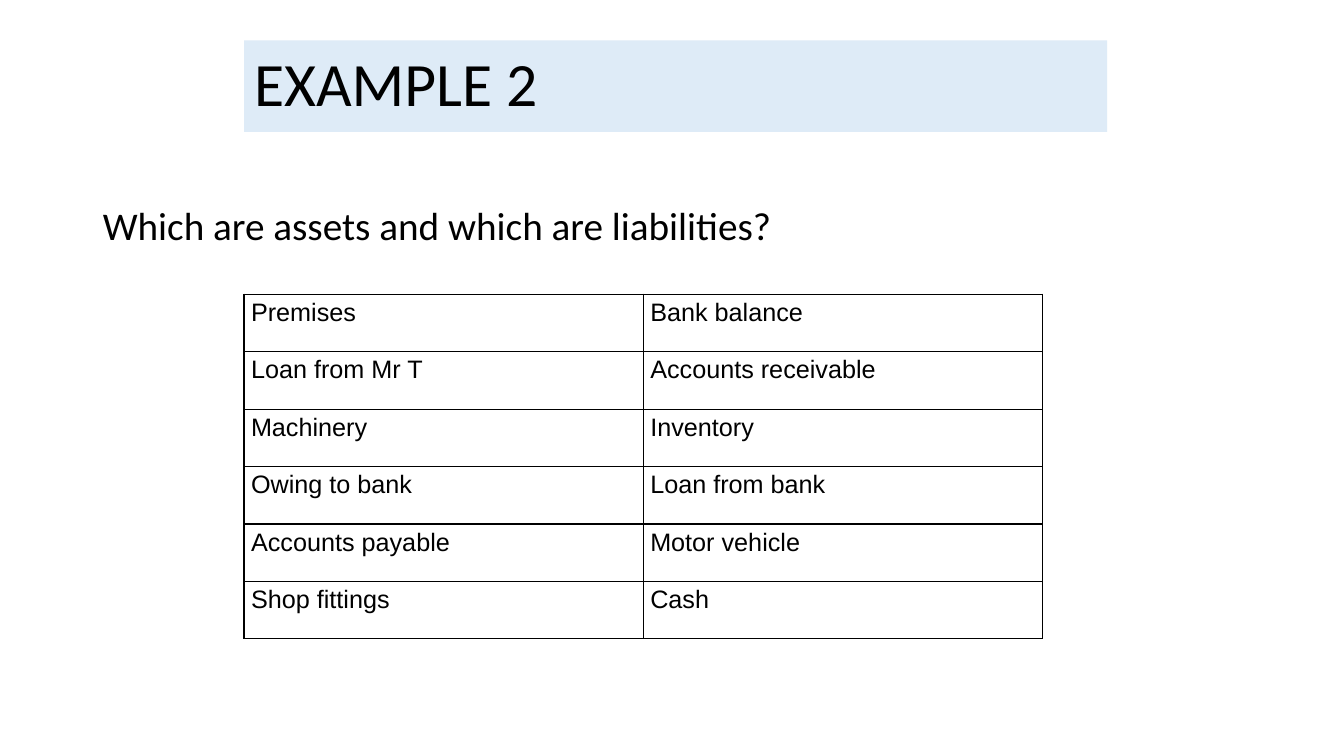
import pptx
import pptx.dml.color
import pptx.enum.text
import pptx.oxml
import pptx.oxml.ns
import pptx.util
from pptx.util import Inches

BLACK = pptx.dml.color.RGBColor(0x00, 0x00, 0x00)
PALE_BLUE = pptx.dml.color.RGBColor(0xDE, 0xEB, 0xF7)
WHITE = pptx.dml.color.RGBColor(0xFF, 0xFF, 0xFF)

ACCOUNT_ITEMS = [
    ("Premises", "Bank balance"),
    ("Loan from Mr T", "Accounts receivable"),
    ("Machinery", "Inventory"),
    ("Owing to bank", "Loan from bank"),
    ("Accounts payable", "Motor vehicle"),
    ("Shop fittings", "Cash"),
]
COLUMN_WIDTH = 3.96
ROW_HEIGHT = 0.57


def write_text(text_frame, text, size, font_name, line_spacing):
    paragraph = text_frame.paragraphs[0]
    paragraph.alignment = pptx.enum.text.PP_ALIGN.LEFT
    paragraph.line_spacing = line_spacing
    paragraph.space_before = pptx.util.Pt(0)
    run = paragraph.add_run()
    run.text = text
    run.font.size = pptx.util.Pt(size)
    run.font.name = font_name
    run.font.color.rgb = BLACK
    return paragraph


def place(shape, left, top, width, height, anchor):
    shape.left, shape.top = Inches(left), Inches(top)
    shape.width, shape.height = Inches(width), Inches(height)
    shape.text_frame.word_wrap = True
    shape.text_frame.auto_size = pptx.enum.text.MSO_AUTO_SIZE.NONE
    shape.text_frame.vertical_anchor = anchor


def add_title(slide, text):
    title = slide.shapes.title
    place(title, 2.42, 0.4, 8.56, 0.91, pptx.enum.text.MSO_ANCHOR.MIDDLE)
    title.fill.solid()
    title.fill.fore_color.rgb = PALE_BLUE
    write_text(title.text_frame, text, size=44, font_name="Calibri", line_spacing=0.9)


def add_question(slide, text):
    body = slide.placeholders[1]
    place(body, 0.92, 2, 11.5, 4.76, pptx.enum.text.MSO_ANCHOR.TOP)
    paragraph = write_text(body.text_frame, text, size=28, font_name="Calibri", line_spacing=0.9)
    # No bullet and no hanging indent
    properties = paragraph._p.get_or_add_pPr()
    properties.set("marL", "0")
    properties.set("indent", "0")
    properties.append(pptx.oxml.parse_xml(f"<a:buNone {pptx.oxml.ns.nsdecls('a')}/>"))


def add_borders(cell):
    properties = cell._tc.get_or_add_tcPr()
    for side in ("lnL", "lnR", "lnT", "lnB"):
        properties.append(pptx.oxml.parse_xml(
            f"<a:{side} {pptx.oxml.ns.nsdecls('a')} w='{pptx.util.Pt(1)}'>"
            f"<a:solidFill><a:srgbClr val='{BLACK}'/></a:solidFill></a:{side}>"))


def format_cell(cell, text):
    cell.margin_left = cell.margin_right = Inches(0.07)
    cell.margin_top = cell.margin_bottom = Inches(0)
    write_text(cell.text_frame, text, size=18, font_name="Arial", line_spacing=1.15)
    add_borders(cell)
    cell.fill.background()


def add_items_table(slide, items):
    row_count, column_count = len(items), len(items[0])
    table = slide.shapes.add_table(
        row_count, column_count, Inches(2.42), Inches(2.92),
        Inches(COLUMN_WIDTH * column_count), Inches(ROW_HEIGHT * row_count)).table
    table.first_row = False
    table.horz_banding = False
    for row, texts in zip(table.rows, items):
        for cell, text in zip(row.cells, texts):
            format_cell(cell, text)


def main():
    presentation = pptx.Presentation()
    presentation.slide_width = Inches(13.33)
    presentation.slide_height = Inches(7.5)
    slide = presentation.slides.add_slide(presentation.slide_layouts[1])
    slide.background.fill.solid()
    slide.background.fill.fore_color.rgb = WHITE

    # Heading and question
    add_title(slide, "EXAMPLE 2")
    add_question(slide, "Which are assets and which are liabilities?")

    # Items to classify
    add_items_table(slide, ACCOUNT_ITEMS)
    presentation.save("out.pptx")


if __name__ == "__main__":
    main()
